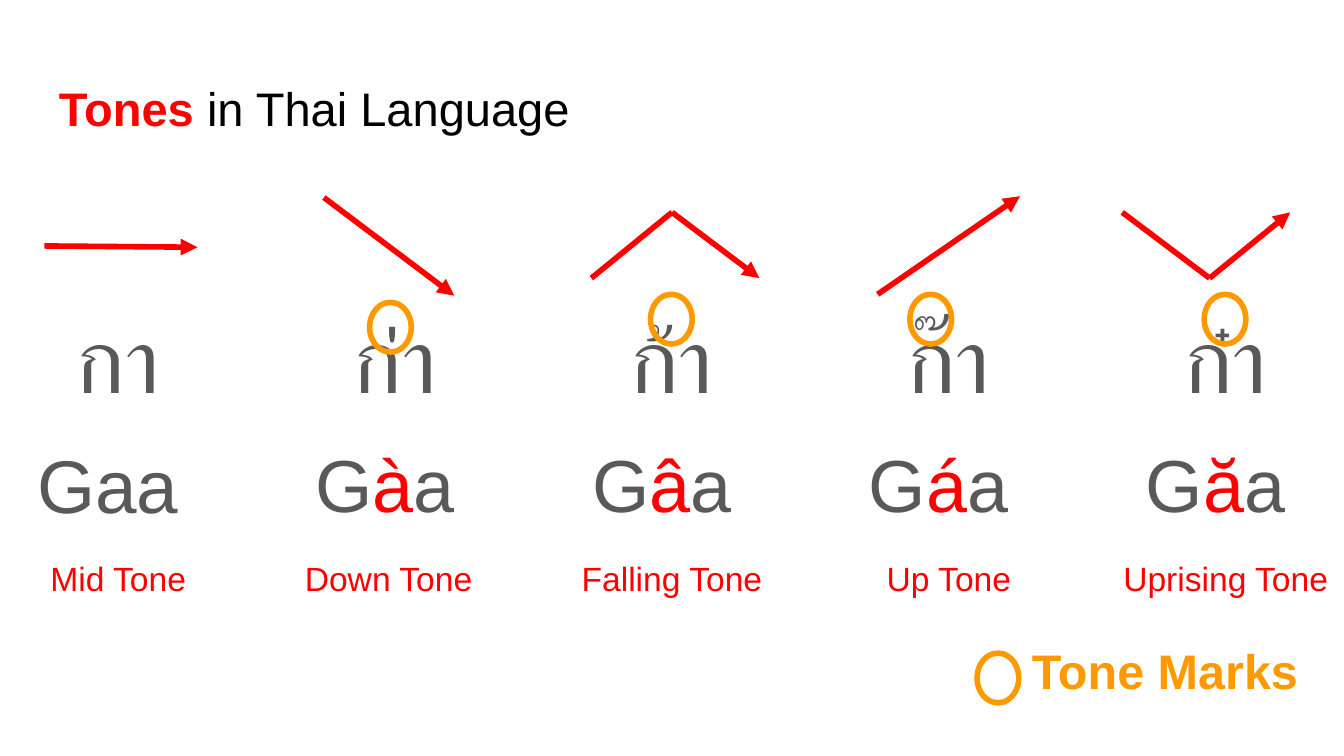
from dataclasses import dataclass

from lxml.etree import SubElement
from pptx import Presentation
from pptx.dml.color import RGBColor
from pptx.enum.shapes import MSO_CONNECTOR, MSO_SHAPE
from pptx.enum.text import PP_ALIGN
from pptx.oxml.ns import qn
from pptx.util import Inches, Pt

RED = RGBColor(0xFF, 0x00, 0x00)
ORANGE = RGBColor(0xFF, 0x99, 0x00)
GRAY = RGBColor(0x59, 0x59, 0x59)
BLACK = RGBColor(0x00, 0x00, 0x00)

FONT = "Arial"
COLUMN_LEFT, COLUMN_STEP, COLUMN_WIDTH = 0.11, 2.06, 1.54
LABEL_WIDTH = 1.77
MARK_WIDTH, MARK_HEIGHT = 0.31, 0.37


@dataclass(frozen=True)
class Span:
    text: str
    size: float
    color: RGBColor
    bold: bool = False


@dataclass(frozen=True)
class Tone:
    thai: str
    latin: list[Span]
    label: str
    contour: list[tuple[float, float]]
    mark: tuple[float, float] | None = None
    label_align: PP_ALIGN = PP_ALIGN.CENTER


def marked(vowel: str) -> list[Span]:
    return [Span("G", 39.5, GRAY), Span(vowel, 39.5, RED), Span("a ", 39.5, GRAY)]


TONES = [
    Tone("กา", [Span("Gaa ", 40, GRAY)], "Mid Tone", [(0.33, 1.83), (1.47, 1.84)]),
    Tone("ก่า", marked("à"), "Down Tone", [(2.41, 1.47), (3.38, 2.2)],
         (2.75, 2.25), PP_ALIGN.LEFT),
    Tone("ก้า", marked("â"), "Falling Tone",
         [(4.4, 2.07), (5, 1.58), (5.65, 2.07)], (4.84, 2.19)),
    Tone("ก๊า", marked("á"), "Up Tone", [(6.53, 2.19), (7.59, 1.46)], (6.77, 2.19)),
    Tone("ก๋า", marked("ă"), "Uprising Tone",
         [(8.35, 1.58), (9, 2.07), (9.6, 1.58)], (8.96, 2.19)),
]


def add_spans(para, spans: list[Span]) -> None:
    for span in spans:
        run = para.add_run()
        run.text = span.text
        run.font.name = FONT
        run.font.size = Pt(span.size)
        run.font.bold = span.bold
        run.font.color.rgb = span.color
        SubElement(run.font._element, qn("a:cs"), typeface=FONT)


def add_text(page, left: float, top: float, width: float, height: float,
             lines: list[list[Span]], align: PP_ALIGN = PP_ALIGN.LEFT,
             line_spacing: float = 1.0, gap: float = 0) -> None:
    box = page.shapes.add_textbox(Inches(left), Inches(top), Inches(width), Inches(height))
    frame = box.text_frame
    frame.word_wrap = True
    frame.margin_left = frame.margin_right = Inches(0.1)
    frame.margin_top = frame.margin_bottom = Inches(0.1)
    for index, spans in enumerate(lines):
        para = frame.add_paragraph() if index else frame.paragraphs[0]
        para.alignment = align
        para.line_spacing = line_spacing
        if index:
            para.space_before = Pt(gap)
        add_spans(para, spans)


def add_contour(page, points: list[tuple[float, float]]) -> None:
    for start, end in zip(points, points[1:]):
        stroke = page.shapes.add_connector(
            MSO_CONNECTOR.STRAIGHT, *map(Inches, start), *map(Inches, end))
        stroke.line.color.rgb = RED
        stroke.line.width = Pt(3)
        properties = stroke._element.spPr
        if end == points[-1]:
            SubElement(properties.find(qn("a:ln")), qn("a:tailEnd"), type="triangle")
        SubElement(properties, qn("a:effectLst"))


def add_mark(page, left: float, top: float) -> None:
    mark = page.shapes.add_shape(MSO_SHAPE.OVAL, Inches(left), Inches(top),
                                 Inches(MARK_WIDTH), Inches(MARK_HEIGHT))
    mark.shadow.inherit = False
    mark.fill.background()
    mark.line.color.rgb = ORANGE
    mark.line.width = Pt(3)


def add_tone(page, tone: Tone, left: float) -> None:
    add_text(page, left, 2.11, COLUMN_WIDTH, 1.94,
             [[Span(tone.thai, 48.8, GRAY)], tone.latin],
             PP_ALIGN.CENTER, line_spacing=1.05, gap=12)
    centered = tone.label_align == PP_ALIGN.CENTER
    label_left = left - (LABEL_WIDTH - COLUMN_WIDTH) / 2 if centered else left
    add_text(page, label_left, 4.05, LABEL_WIDTH, 0.63,
             [[Span(tone.label, 18, RED)]], tone.label_align)
    add_contour(page, tone.contour)
    if tone.mark:
        add_mark(page, *tone.mark)


def main() -> None:
    deck = Presentation()
    deck.slide_width, deck.slide_height = Inches(10), Inches(10 * 9 / 16)
    page = deck.slides.add_slide(deck.slide_layouts[6])
    add_text(page, 0.34, 0.49, 9.32, 0.63,
             [[Span("Tones", 25.2, RED, True), Span(" in Thai Language", 25.2, BLACK)]])
    for index, tone in enumerate(TONES):
        add_tone(page, tone, COLUMN_LEFT + index * COLUMN_STEP)
    add_text(page, 7.58, 4.67, 2.18, 0.73, [[Span("Tone Marks", 26, ORANGE, True)]])
    add_mark(page, 7.27, 4.86)
    deck.save("out.pptx")


if __name__ == "__main__":
    main()
